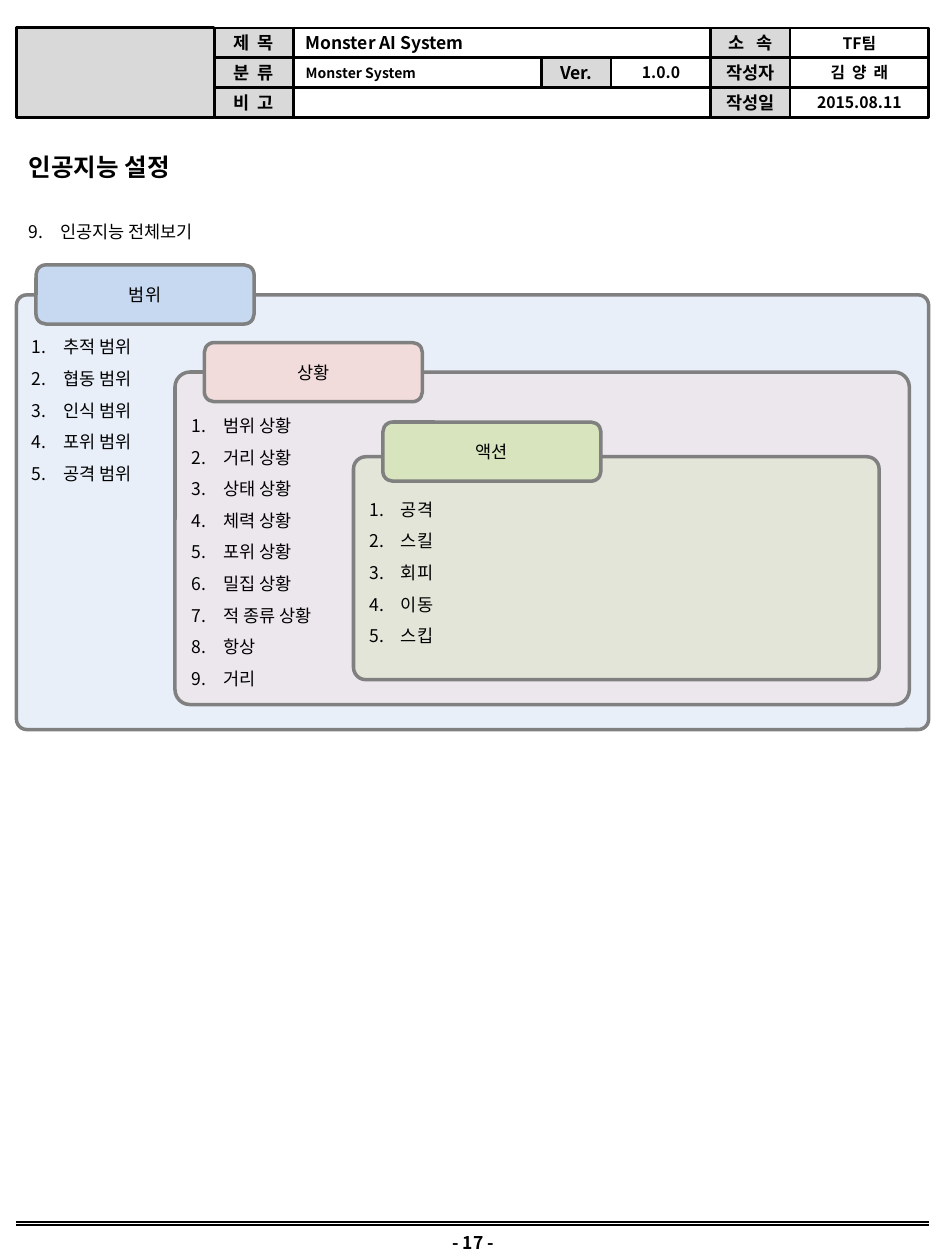
from lxml import etree
from pptx import Presentation
from pptx.dml.color import RGBColor
from pptx.enum.shapes import MSO_CONNECTOR, MSO_SHAPE
from pptx.enum.text import MSO_ANCHOR, PP_ALIGN
from pptx.oxml.ns import qn
from pptx.util import Pt

RECTANGLE, ROUNDED = MSO_SHAPE.RECTANGLE, MSO_SHAPE.ROUNDED_RECTANGLE
STRAIGHT = MSO_CONNECTOR.STRAIGHT
LEFT, CENTER = PP_ALIGN.LEFT, PP_ALIGN.CENTER
TOP, MIDDLE = MSO_ANCHOR.TOP, MSO_ANCHOR.MIDDLE

FONT = "Noto Sans CJK KR"
BLACK, GRAY, LABEL_FILL = "000000", "808080", "D9D9D9"
PAGE_LEFT, PAGE_WIDTH = 9.4, 521.3
HEADER_TOP, ROW_HEIGHT = 15.9, 17.05
TAB_WIDTH, TAB_HEIGHT = 124.6, 33.8
LINE_PITCH, LIST_INDENT = 18.05, 18

# Header cells: left, width, row, text, size, shaded, alignment, letter spacing
HEADER_CELLS = [
    (122.4, 45.2, 0, "제 목", 10, True, CENTER, 1.1),
    (122.4, 45.2, 1, "분 류", 10, True, CENTER, 1.1),
    (122.4, 45.2, 2, "비 고", 10, True, CENTER, 1.1),
    (167.6, 238.6, 0, "Monster AI System", 10, False, LEFT, 0),
    (167.6, 142, 1, "Monster System", 8, False, LEFT, 0),
    (309.6, 39.6, 1, "Ver.", 10, True, CENTER, 0),
    (349.2, 57, 1, "1.0.0", 9, False, CENTER, 0),
    (167.6, 238.6, 2, "", 10, False, LEFT, 0),
    (406.2, 45.2, 0, "소 속", 10, True, CENTER, 2.2),
    (406.2, 45.2, 1, "작성자", 10, True, CENTER, 0),
    (406.2, 45.2, 2, "작성일", 10, True, CENTER, 0),
    (451.4, 79.3, 0, "TF팀", 9, False, CENTER, 0),
    (451.4, 79.3, 1, "김 양 래", 9, False, CENTER, 1),
    (451.4, 79.3, 2, "2015.08.11", 9, False, CENTER, 0),
]

# Nested panels: box, corner, colour, tab position, title, items
PANELS = [
    ((PAGE_LEFT, 168.5, PAGE_WIDTH, 248.4), 0.024, "C6D9F1", (20.6, 151.4), "범위",
     ["추적 범위", "협동 범위", "인식 범위", "포위 범위", "공격 범위"]),
    ((100, 212.6, 419.6, 190), 0.045, "F2DCDB", (116.8, 195.8), "상황",
     ["범위 상황", "거리 상황", "상태 상황", "체력 상황", "포위 상황",
      "밀집 상황", "적 종류 상황", "항상", "거리"]),
    ((202, 261, 300.4, 127.4), 0.055, "D7E4BD", (218.8, 241.2), "액션",
     ["공격", "스킬", "회피", "이동", "스킵"]),
]


def color(hex_value):
    return RGBColor.from_string(hex_value)


def set_font(paragraph, size, bold=False):
    font = paragraph.font
    font.name, font.size, font.bold = FONT, Pt(size), bold
    font.color.rgb = color(BLACK)
    for run in paragraph.runs:
        properties = run._r.get_or_add_rPr()
        etree.SubElement(properties, qn("a:ea")).set("typeface", FONT)


def prepare_frame(shape, anchor, vertical_margin=0):
    frame = shape.text_frame
    frame.word_wrap = True
    frame.vertical_anchor = anchor
    frame.margin_top = frame.margin_bottom = Pt(vertical_margin)
    return frame


def write_line(shape, text, size, bold=False, alignment=CENTER, spacing=0):
    paragraph = prepare_frame(shape, MIDDLE).paragraphs[0]
    paragraph.alignment = alignment
    run = paragraph.add_run()
    run.text = text
    if spacing:
        run._r.get_or_add_rPr().set("spc", str(round(spacing * 100)))
    set_font(paragraph, size, bold)
    return paragraph


def write_numbered_list(frame, items, start=1):
    for index, item in enumerate(items):
        paragraph = frame.paragraphs[0] if index == 0 else frame.add_paragraph()
        paragraph.text = item
        paragraph.alignment = LEFT
        paragraph.line_spacing = Pt(LINE_PITCH)
        properties = paragraph._p.get_or_add_pPr()
        properties.set("marL", str(Pt(LIST_INDENT)))
        properties.set("indent", str(-Pt(LIST_INDENT)))
        etree.SubElement(properties, qn("a:buFont")).set("typeface", "+mj-lt")
        numbering = etree.SubElement(properties, qn("a:buAutoNum"))
        numbering.set("type", "arabicPeriod")
        if start > 1:
            numbering.set("startAt", str(start))
        set_font(paragraph, 10)


def add_box(slide, kind, box, fill, line, line_width, opacity=None):
    shape = slide.shapes.add_shape(kind, *map(Pt, box))
    shape.shadow.inherit = False
    shape.line.color.rgb = color(line)
    shape.line.width = Pt(line_width)
    if fill is None:
        shape.fill.background()
        return shape
    shape.fill.solid()
    shape.fill.fore_color.rgb = color(fill)
    if opacity:
        fill_color = shape._element.spPr.find(qn("a:solidFill"))[0]
        etree.SubElement(fill_color, qn("a:alpha")).set("val", str(opacity * 1000))
    return shape


def add_text_box(slide, *box):
    return slide.shapes.add_textbox(*map(Pt, box))


def add_header(slide):
    add_box(slide, RECTANGLE, (PAGE_LEFT, HEADER_TOP, 113, 3 * ROW_HEIGHT),
            LABEL_FILL, BLACK, 1.5)
    for left, width, row, text, size, shaded, alignment, spacing in HEADER_CELLS:
        box = (left, HEADER_TOP + row * ROW_HEIGHT, width, ROW_HEIGHT)
        cell = add_box(slide, RECTANGLE, box, LABEL_FILL if shaded else None, BLACK, 1.5)
        if text:
            write_line(cell, text, size, True, alignment, spacing)


def add_panel(slide, box, corner, fill, tab_position, title, items):
    panel = add_box(slide, ROUNDED, box, fill, GRAY, 2, opacity=40)
    panel.adjustments[0] = corner
    frame = prepare_frame(panel, TOP)
    frame.margin_top = Pt(16)
    write_numbered_list(frame, items)
    tab = add_box(slide, ROUNDED, (*tab_position, TAB_WIDTH, TAB_HEIGHT), fill, GRAY, 2)
    write_line(tab, title, 10)


def add_footer(slide):
    for y in (698.2, 700):
        rule = slide.shapes.add_connector(
            STRAIGHT, Pt(PAGE_LEFT), Pt(y), Pt(PAGE_LEFT + PAGE_WIDTH), Pt(y))
        rule.line.color.rgb = color(BLACK)
        rule.line.width = Pt(1)
        etree.SubElement(rule._element.spPr, qn("a:effectLst"))
    write_line(add_text_box(slide, 241.9, 699.8, 56.9, 20.2), "- 17 -", 10, True)


def main():
    presentation = Presentation()
    presentation.slide_width, presentation.slide_height = Pt(540), Pt(720)
    slide = presentation.slides.add_slide(presentation.slide_layouts[6])

    add_header(slide)

    # Section title and numbered heading
    title_box = add_text_box(slide, PAGE_LEFT, 76.4, PAGE_WIDTH, 28)
    title = write_line(title_box, "인공지능 설정", 14, True, LEFT)
    title.line_spacing = Pt(27)
    heading_box = add_text_box(slide, PAGE_LEFT, 116, PAGE_WIDTH, 572.4)
    write_numbered_list(prepare_frame(heading_box, TOP, 4), ["인공지능 전체보기"], start=9)

    # Nested diagram
    for panel in PANELS:
        add_panel(slide, *panel)

    add_footer(slide)
    presentation.save("out.pptx")


if __name__ == "__main__":
    main()
